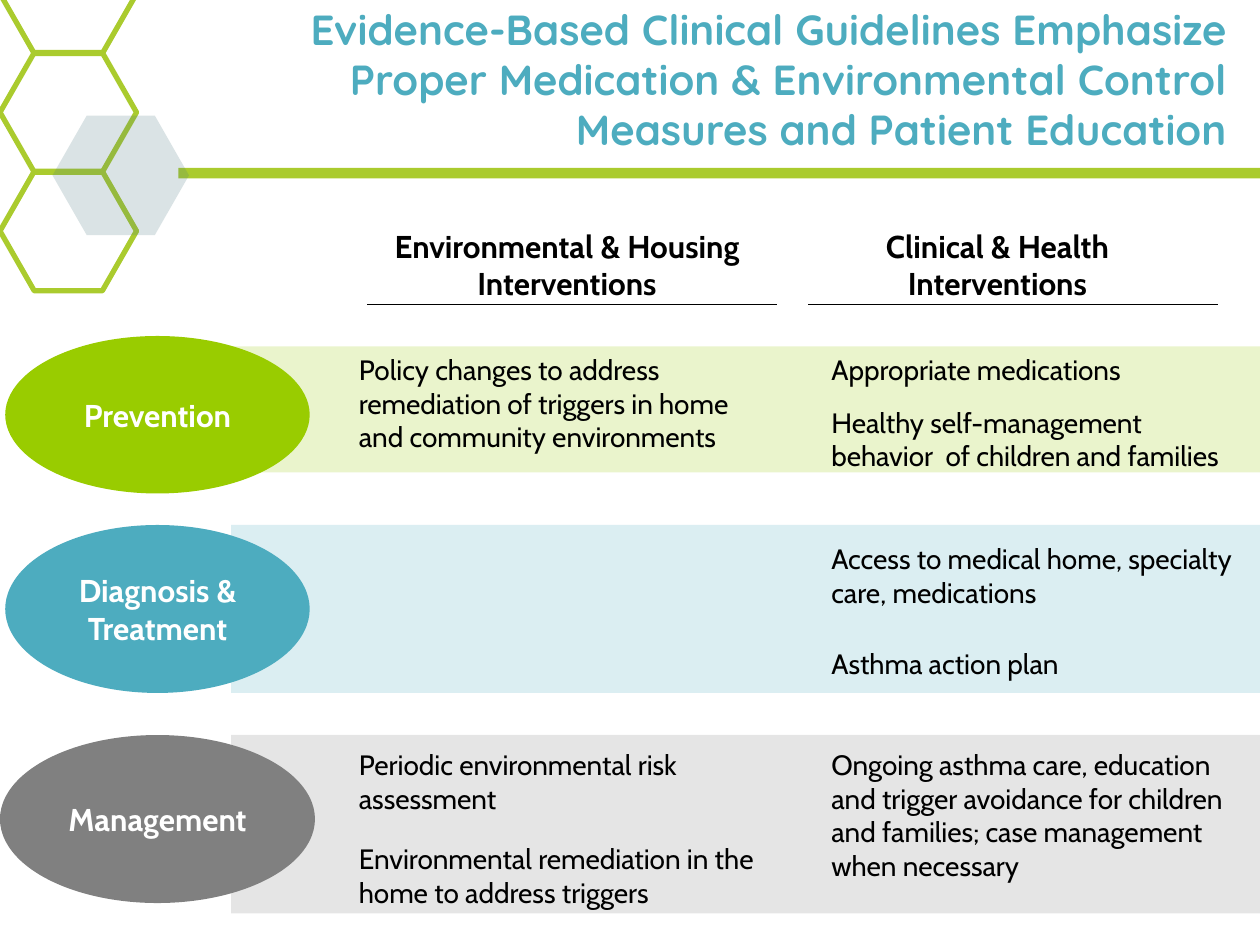
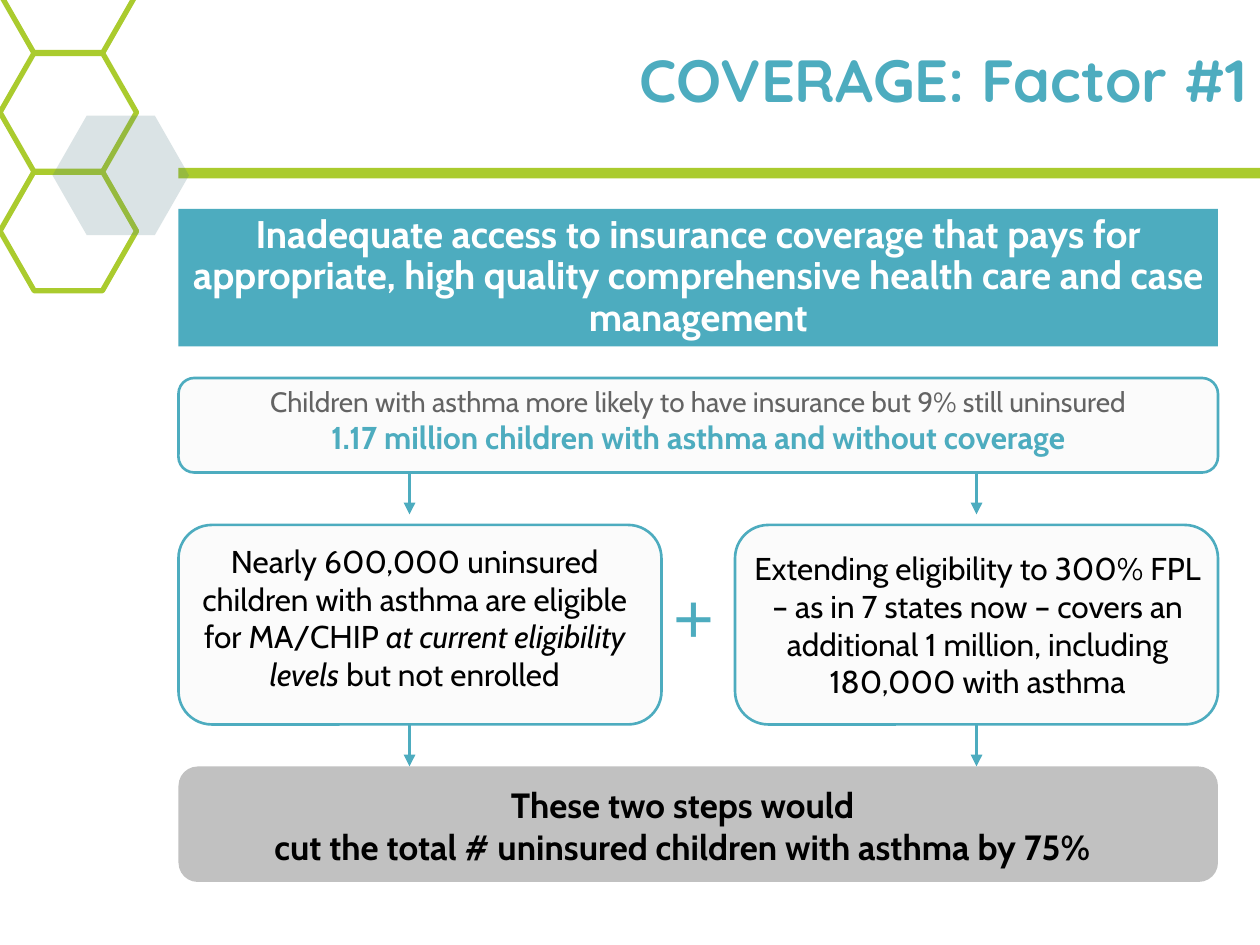
"""Build two slides on asthma guidelines and insurance coverage."""
import lxml.etree
import pptx
import pptx.dml.color
import pptx.enum.shapes
import pptx.enum.text
import pptx.oxml.ns
import pptx.util

RGB = pptx.dml.color.RGBColor
KIND = pptx.enum.shapes.MSO_SHAPE
ALIGN = pptx.enum.text.PP_ALIGN
ANCHOR = pptx.enum.text.MSO_ANCHOR
qn = pptx.oxml.ns.qn

TEAL = RGB(0x4D, 0xAC, 0xBF)
LIME = RGB(0xAA, 0xCB, 0x2E)
GREEN = RGB(0x99, 0xCC, 0x00)
GRAY = RGB(0x80, 0x80, 0x80)
SLATE = RGB(0x49, 0x76, 0x7F)
SILVER = RGB(0xC1, 0xC1, 0xC1)
DIM = RGB(0x63, 0x63, 0x63)
BLACK = RGB(0, 0, 0)
WHITE = RGB(0xFF, 0xFF, 0xFF)

SCALE = 7620
WIDE, HIGH = 1200, 900
BREAK = "\n"

GUIDE = ("Evidence-Based Clinical Guidelines Emphasize Proper Medication "
         "& Environmental Control Measures and Patient Education")
HEADS = [
    ("Environmental & Housing Interventions", 350, 380, 350),
    ("Clinical & Health Interventions", 770, 360, 770),
]
LEFT, RIGHT = 330, 780
ROWS = [
    dict(name="Prevention", lines=1, color=GREEN, band=(330, 120),
         oval=(5, 320, 290, 150), notes=[
             (LEFT, 330, 3, "Policy changes to address remediation of triggers "
                            "in home and community environments"),
             (RIGHT, 330, 1, "Appropriate medications"),
             (RIGHT, 380, 2, "Healthy self-management behavior  of children "
                             "and families")]),
    dict(name="Diagnosis & Treatment", lines=2, color=TEAL, band=(500, 160),
         oval=(5, 500, 290, 160), notes=[
             (RIGHT, 510, 2, "Access to medical home, specialty care, "
                             "medications"),
             (RIGHT, 610, 1, "Asthma action plan")]),
    dict(name="Management", lines=1, color=GRAY, band=(700, 170),
         oval=(0, 700, 300, 160), notes=[
             (LEFT, 706, 2, "Periodic environmental risk assessment"),
             (LEFT, 796, 2, "Environmental remediation in the home to "
                            "address triggers"),
             (RIGHT, 706, 4, "Ongoing asthma care, education and trigger "
                             "avoidance for children and families; case "
                             "management when necessary")]),
]

FACTOR = "COVERAGE: Factor #1"
BANNER = ("Inadequate access to insurance coverage that pays for appropriate, "
          "high quality comprehensive health care and case management")
FACTS = [
    ("Children with asthma more likely to have insurance but 9% still "
     "uninsured", dict(size=16, color=DIM)),
    (BREAK, {}),
    ("1.17 million children with asthma and without coverage",
     dict(color=TEAL, bold=True)),
]
STEPS = [
    ((170, 510, 450, 210), [
        ("Nearly 600,000 uninsured children with asthma are eligible for "
         "MA/CHIP ", {}),
        ("at current eligibility levels", dict(italic=True)),
        (" but not enrolled", {})]),
    ((706, 517, 450, 156), [
        ("Extending eligibility to 300% FPL – as in 7 states now – covers an "
         "additional 1 million, including 180,000 with asthma", {})]),
]
RESULT = [
    ("These two steps would", dict(size=20, bold=True)),
    (BREAK, {}),
    ("cut the total # uninsured children with asthma by 75%",
     dict(size=20, bold=True)),
]


def px(*nums):
    return [pptx.util.Emu(num * SCALE) for num in nums]


def shape(slide, kind, box, fill=None, alpha=100, line=None, width=1.5):
    item = slide.shapes.add_shape(kind, *px(*box))
    item.shadow.inherit = False
    if fill is None:
        item.fill.background()
    else:
        item.fill.solid()
        item.fill.fore_color.rgb = fill
    if alpha < 100:
        tint = item.element.spPr.find(".//" + qn("a:srgbClr"))
        lxml.etree.SubElement(tint, qn("a:alpha"), val=str(alpha * 1000))
    if line is None:
        item.line.fill.background()
    else:
        item.line.color.rgb = line
        item.line.width = pptx.util.Pt(width)
    return item


def write(item, runs, align=ALIGN.LEFT, anchor=ANCHOR.TOP, **base):
    frame = item.text_frame
    frame.word_wrap = True
    frame.auto_size = pptx.enum.text.MSO_AUTO_SIZE.NONE
    frame.vertical_anchor = anchor
    para = frame.paragraphs[0]
    para.alignment = align
    para.space_before = pptx.util.Pt(0)
    for text, own in runs:
        if text == BREAK:
            para.add_line_break()
            continue
        look = dict(size=18, color=BLACK, bold=False, italic=False,
                    face="Cabin") | base | own
        run = para.add_run()
        run.text = text
        run.font.name = look["face"]
        run.font.size = pptx.util.Pt(look["size"])
        run.font.bold = look["bold"]
        run.font.italic = look["italic"]
        run.font.color.rgb = look["color"]
    return para


def label(slide, box, runs, **look):
    return write(slide.shapes.add_textbox(*px(*box)), runs, **look)


def place(item, box):
    item.left, item.top, item.width, item.height = px(*box)
    item.element.getparent().append(item.element)
    return item


def title(slide, text, box, size, foot=0):
    item = place(slide.shapes.title, box)
    item.text_frame.margin_top, item.text_frame.margin_bottom = px(0, foot)
    write(item, [(text, {})], align=ALIGN.RIGHT, anchor=ANCHOR.MIDDLE,
          size=size, color=TEAL, bold=True, face="Quicksand")


def rule(slide, start, end, color, width, arrow=False):
    item = slide.shapes.add_connector(
        pptx.enum.shapes.MSO_CONNECTOR.STRAIGHT, *px(*start, *end))
    item.line.color.rgb = color
    item.line.width = pptx.util.Pt(width)
    if arrow:
        lxml.etree.SubElement(item.line._get_or_add_ln(), qn("a:tailEnd"),
                              type="triangle")
    lxml.etree.SubElement(item.element.spPr, qn("a:effectLst"))


def hexa(slide, x, y, **look):
    item = shape(slide, KIND.HEXAGON, (x, y, 130, 114), **look)
    item.adjustments[0] = 0.286
    item.rotation = 180
    return item


def brand(deck, slide):
    parts = [hexa(slide, 0, 50 + 113 * step, line=LIME, width=3)
             for step in (-1, 0, 1)]
    parts.append(shape(slide, KIND.RECTANGLE, (170, 160, 1030, 10), LIME))
    parts.append(hexa(slide, 50, 110, fill=SLATE, alpha=20))
    for num, part in enumerate(parts, 20):
        part.element.nvSpPr.cNvPr.set("id", str(num))
        deck.slide_master.shapes.element.append(part.element)


def guide(slide):
    for row in reversed(ROWS):
        top, high = row["band"]
        shape(slide, KIND.RECTANGLE, (220, top, WIDE - 220, high),
              row["color"], alpha=20)
    title(slide, GUIDE, (180, 0, 1000, 200), 24, foot=50)
    for text, x, wide, start in HEADS:
        label(slide, (x, 210, wide, 84), [(text, {})],
              align=ALIGN.CENTER, bold=True)
        rule(slide, (start, 290), (start + 390, 290), BLACK, 0.75)
    for row in ROWS:
        shape(slide, KIND.OVAL, row["oval"], row["color"])
        _, top, _, high = row["oval"]
        tall = 12 + 36 * row["lines"]
        label(slide, (40, top + (high - tall) // 2, 220, tall),
              [(row["name"], {})], align=ALIGN.CENTER, bold=True, color=WHITE)
        for x, y, lines, text in row["notes"]:
            label(slide, (x, y, 420, 12 + 32 * lines), [(text, {})], size=16)


def cover(slide):
    mid = ALIGN.CENTER
    pale = dict(fill=SILVER, alpha=6, line=TEAL)
    shape(slide, KIND.ROUNDED_RECTANGLE, (170, 730, 990, 110), SILVER)
    shape(slide, KIND.ROUNDED_RECTANGLE, (170, 360, 990, 90), **pale)
    title(slide, FACTOR, (240, 0, 960, 150), 34)
    body = place(slide.placeholders[1], (180, 360, 970, 160))
    props = write(body, FACTS, align=mid)._p.get_or_add_pPr()
    props.set("marL", "0")
    props.set("indent", "0")
    lxml.etree.SubElement(props, qn("a:buNone"))
    bar = shape(slide, KIND.RECTANGLE, (170, 199, 990, 131), TEAL)
    write(bar, [(BANNER, {})], align=mid, size=22, color=WHITE,
          bold=True).line_spacing = 0.9
    for x, (box, runs) in zip((170, 700), STEPS):
        shape(slide, KIND.ROUNDED_RECTANGLE, (x, 500, 460, 190), **pale)
        label(slide, box, runs, align=mid)
    label(slide, (630, 540, 50, 92), [("+", {})], size=40, color=TEAL,
          face="Arial")
    label(slide, (210, 740, 880, 146), RESULT, align=mid)
    for x in (390, 930):
        for y in (450, 690):
            rule(slide, (x, y), (x, y + 40), TEAL, 2.25, arrow=True)


def main():
    deck = pptx.Presentation()
    deck.slide_width, deck.slide_height = px(WIDE, HIGH)
    first = deck.slides.add_slide(deck.slide_layouts[5])
    brand(deck, first)
    guide(first)
    cover(deck.slides.add_slide(deck.slide_layouts[1]))
    deck.save("out.pptx")


if __name__ == "__main__":
    main()
